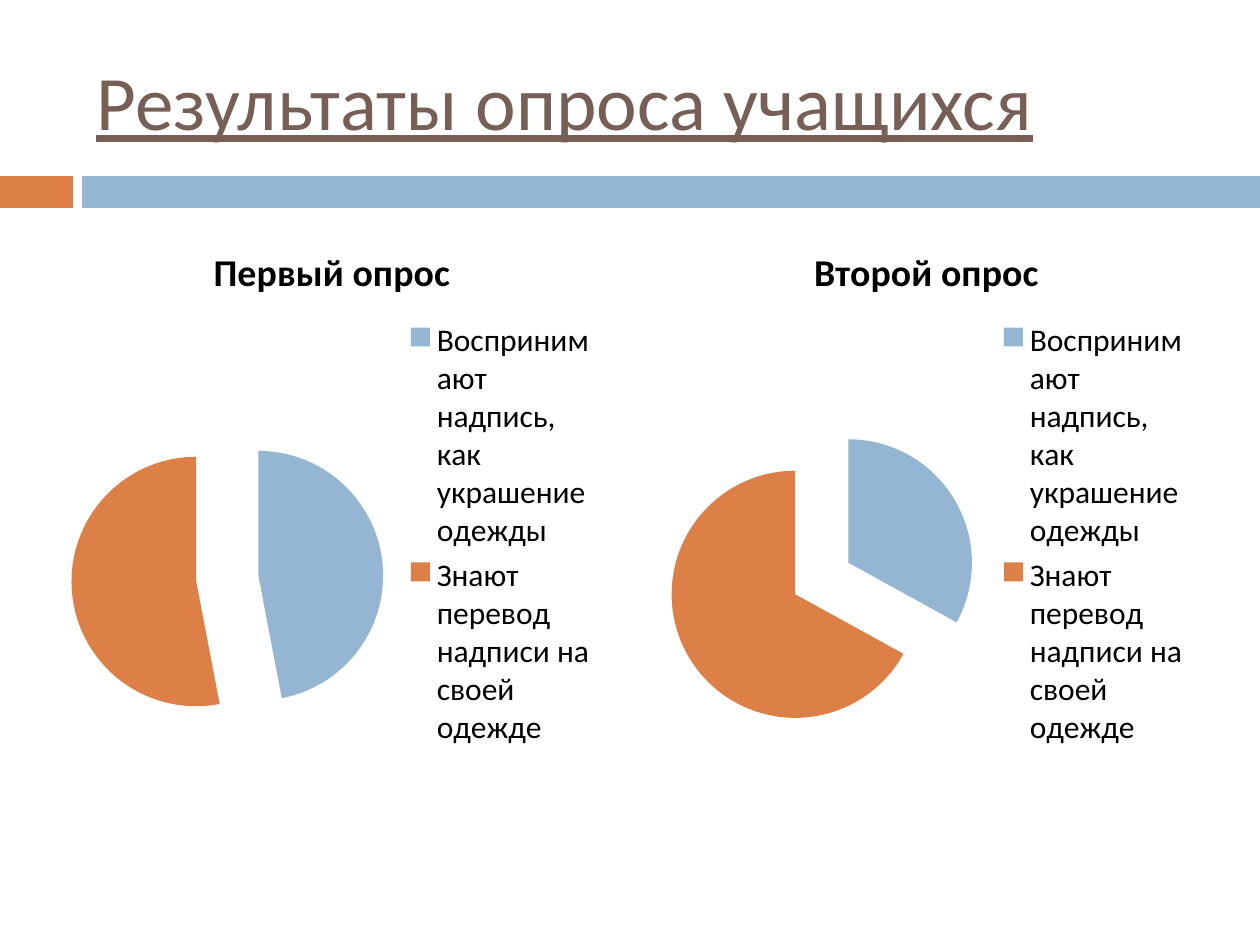
from lxml import etree
from pptx import Presentation
from pptx.chart.data import CategoryChartData
from pptx.dml.color import RGBColor
from pptx.enum.chart import XL_CHART_TYPE, XL_LEGEND_POSITION
from pptx.enum.shapes import MSO_SHAPE
from pptx.enum.text import MSO_ANCHOR
from pptx.oxml.ns import qn
from pptx.util import Emu, Pt

PIE = XL_CHART_TYPE.PIE
RIGHT = XL_LEGEND_POSITION.RIGHT
RECT = MSO_SHAPE.RECTANGLE
MIDDLE = MSO_ANCHOR.MIDDLE

PX = 914400 / 126
FONT = "Calibri"
BLUE = RGBColor(0x94, 0xB6, 0xD2)
ORANGE = RGBColor(0xDD, 0x80, 0x47)
BROWN = RGBColor(0x77, 0x5F, 0x55)
BLACK = RGBColor(0, 0, 0)

ANSWERS = ["Воспринимают надпись, как украшение одежды",
           "Знают перевод надписи на своей одежде"]
SURVEYS = [("Первый опрос", (47, 53), (54, 219, 556, 630)),
           ("Второй опрос", (33, 67), (650, 219, 553, 630))]


def px(*lengths):
    return [Emu(round(n * PX)) for n in lengths]


def style(font, size, color, bold=False, underline=None):
    font.name = FONT
    font.size = Pt(size)
    font.color.rgb = color
    font.bold = bold
    if underline is not None:
        font.underline = underline


def add_text(s, box, text, **fmt):
    tf = s.shapes.add_textbox(*px(*box)).text_frame
    tf.word_wrap = True
    tf.vertical_anchor = MIDDLE
    r = tf.paragraphs[0].add_run()
    r.text = text
    style(r.font, **fmt)


def add_band(s, x, y, w, h, split=73, gap=9):
    start = split + gap
    for left, width, color in ((x, split, ORANGE), (x + start, w - start, BLUE)):
        sp = s.shapes.add_shape(RECT, *px(left, y, width, h))
        sp.shadow.inherit = False
        sp.fill.solid()
        sp.fill.fore_color.rgb = color
        sp.line.fill.background()


def add_survey(s, box, title, values):
    data = CategoryChartData()
    data.categories = ANSWERS
    data.add_series(title, values)
    chart = s.shapes.add_chart(PIE, *px(*box), data).chart
    style(chart.font, 18, BLACK)

    chart.has_title = True
    tf = chart.chart_title.text_frame
    tf.text = title
    style(tf.paragraphs[0].runs[0].font, 21.6, BLACK, bold=True)
    chart.chart_title.include_in_layout = False

    chart.has_legend = True
    chart.legend.position = RIGHT
    chart.legend.include_in_layout = False

    plot = chart.plots[0]
    plot.vary_by_categories = True
    series = plot.series[0]
    for i, color in enumerate((BLUE, ORANGE)):
        fill = series.points[i].format.fill
        fill.solid()
        fill.fore_color.rgb = color
    explosion = etree.Element(qn("c:explosion"), val="25")
    series._element.find(qn("c:dPt")).addprevious(explosion)


def main():
    prs = Presentation()
    prs.slide_width, prs.slide_height = px(1260, 945)
    s = prs.slides.add_slide(prs.slide_layouts[6])
    add_band(s, 0, 176, 1260, 32)
    add_text(s, (84, 32, 1124, 136), "Результаты опроса учащихся",
             size=44, color=BROWN, underline=True)
    for title, values, box in SURVEYS:
        add_survey(s, box, title, values)
    prs.save("out.pptx")


if __name__ == "__main__":
    main()
